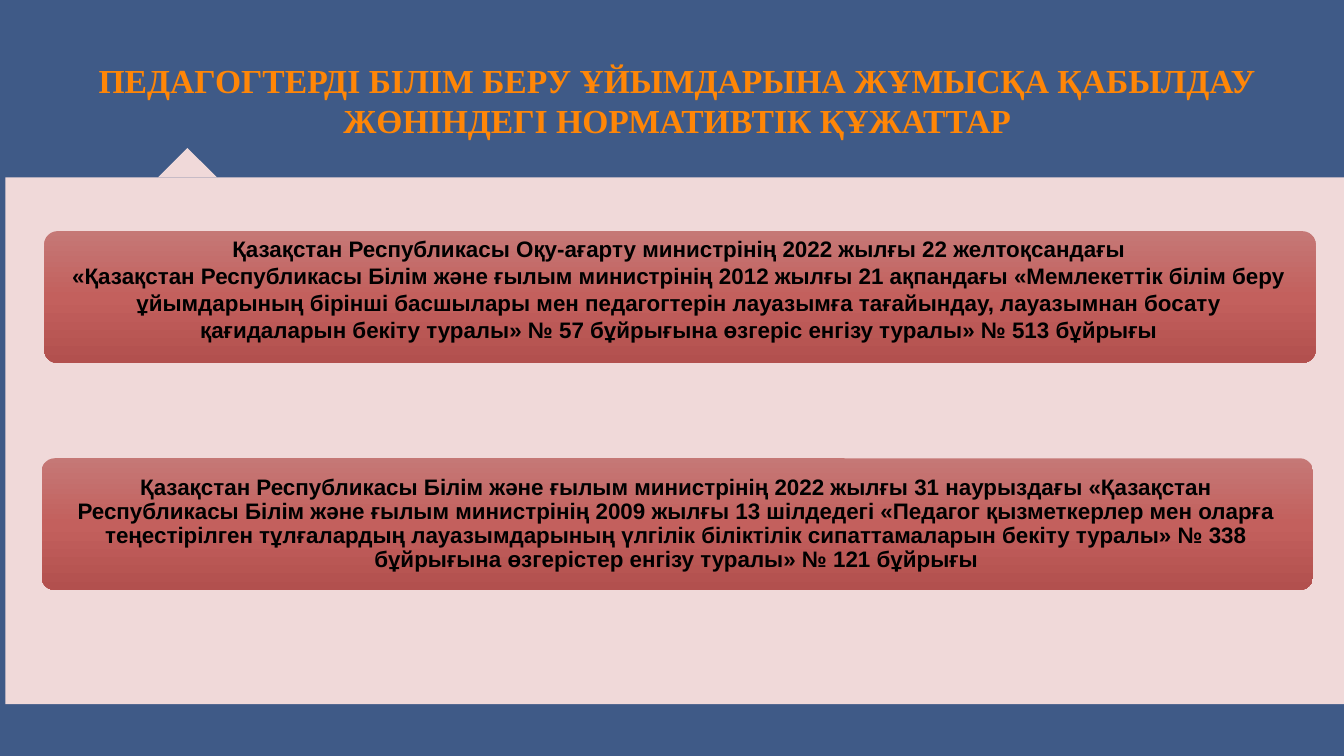
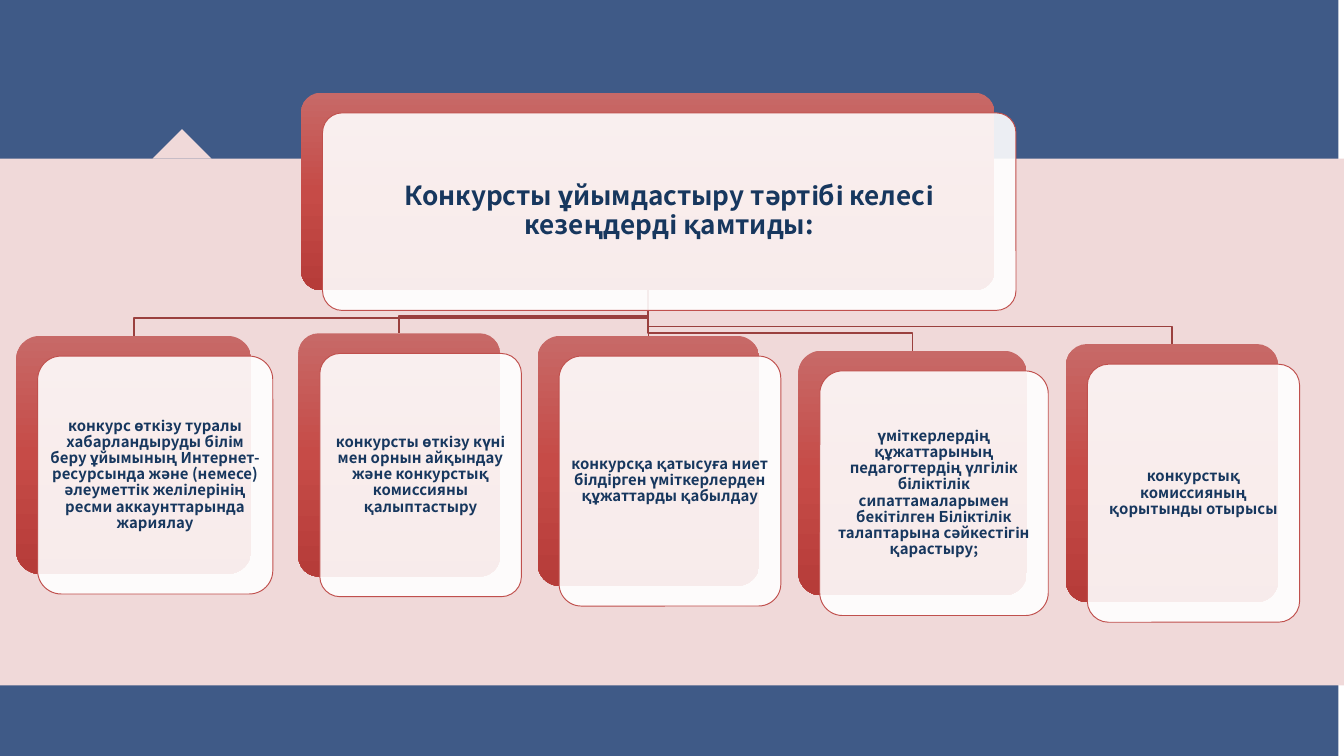
from copy import deepcopy
from dataclasses import dataclass

from lxml.etree import SubElement
from pptx import Presentation
from pptx.dml.color import RGBColor
from pptx.enum.shapes import MSO_SHAPE as Preset
from pptx.enum.text import MSO_ANCHOR as Anchor, PP_ALIGN as Align
from pptx.oxml.ns import qn
from pptx.util import Inches, Pt

COLUMNS, ROWS = 100, 56.25  # square grid units of a tenth of an inch


@dataclass(frozen=True)
class Theme:
    band: str = "3F5A87"
    panel: str = "F0D9D9"
    order: tuple = ("C57876", "C3605D", "B2504E")
    card_back: tuple = ("C76967", "C64B47", "B63C39")
    card_front: str = "FFFFFF"
    card_edge: str = "C0504D"
    branch: str = "9A403E"
    front_opacity: int = 90
    corner: float = 0.1


THEME = Theme()
TITLE = {"name": "Times New Roman", "size": 18, "color": "FF8607"}
ORDER = {"name": "Arial", "size": 12, "color": "000000"}
HEADING = {"name": "Noto Sans CJK SC", "size": 14, "color": "17375E"}
STAGE = {**HEADING, "size": 8}

ORDERS_TITLE = ("ПЕДАГОГТЕРДІ БІЛІМ БЕРУ ҰЙЫМДАРЫНА ЖҰМЫСҚА ҚАБЫЛДАУ "
                "ЖӨНІНДЕГІ НОРМАТИВТІК ҚҰЖАТТАР")
ORDER_513 = (
    "Қазақстан Республикасы Оқу-ағарту министрінің 2022 жылғы 22 желтоқсандағы",
    "«Қазақстан Республикасы Білім және ғылым министрінің 2012 жылғы 21 ақпандағы "
    "«Мемлекеттік білім беру ұйымдарының бірінші басшылары мен педагогтерін "
    "лауазымға тағайындау, лауазымнан босату қағидаларын бекіту туралы» № 57 "
    "бұйрығына өзгеріс енгізу туралы» № 513 бұйрығы",
)
ORDER_121 = (
    "Қазақстан Республикасы Білім және ғылым министрінің 2022 жылғы 31 наурыздағы "
    "«Қазақстан Республикасы Білім және ғылым министрінің 2009 жылғы 13 шілдедегі "
    "«Педагог қызметкерлер мен оларға теңестірілген тұлғалардың лауазымдарының "
    "үлгілік біліктілік сипаттамаларын бекіту туралы» № 338 бұйрығына өзгерістер "
    "енгізу туралы» № 121 бұйрығы",
)
STAGES_HEADING = "Конкурсты ұйымдастыру тәртібі келесі кезеңдерді қамтиды:"
HEADING_BOX = (22.4, 6.9, 51.6, 14.7)
STAGES = [
    ((1.2, 25, 17.5, 17.7),
     "конкурс өткізу туралы хабарландыруды білім беру ұйымының Интернет-ресурсында "
     "және (немесе) әлеуметтік желілерінің ресми аккаунттарында жариялау"),
    ((22.2, 24.8, 15, 18.1),
     "конкурсты өткізу күні мен орнын айқындау және конкурстық комиссияны "
     "қалыптастыру"),
    ((40, 25, 16.5, 18.6),
     "конкурсқа қатысуға ниет білдірген үміткерлерден құжаттарды қабылдау"),
    ((59.4, 26.1, 17, 18.2),
     "үміткерлердің құжаттарының педагогтердің үлгілік біліктілік "
     "сипаттамаларымен бекітілген Біліктілік талаптарына сәйкестігін қарастыру;"),
    ((79.3, 25.6, 15.8, 19.2), "конкурстық комиссияның қорытынды отырысы"),
]


def grid(*units):
    return [Inches(unit / 10) for unit in units]


def set_all(target, values):
    for name, value in values.items():
        setattr(target, name, value)


def paint(fill, color):
    fill.solid()
    fill.fore_color.rgb = RGBColor.from_string(color)


def add_block(slide, preset, box, color):
    block = slide.shapes.add_shape(preset, *grid(*box))
    block.shadow.inherit = False
    block.line.fill.background()
    paint(block.fill, color)
    return block


def add_rounded(slide, box, colors):
    """Rounded block shaded from top to bottom through three colours."""
    block = add_block(slide, Preset.ROUNDED_RECTANGLE, box, colors[0])
    block.adjustments[0] = THEME.corner
    block.fill.gradient()
    block.fill.gradient_angle = 270
    stop_list = next(block.element.iter(qn("a:gsLst")))
    stop_list.append(deepcopy(stop_list[-1]))
    for index, (stop, color) in enumerate(zip(block.fill.gradient_stops, colors)):
        stop.position = index / (len(colors) - 1)
        stop.color.rgb = RGBColor.from_string(color)
    return block


def write(holder, paragraphs, style, spacing=1.0, margins=None):
    """Margins are left, top, right and bottom in grid units."""
    frame = holder.text_frame
    set_all(frame, {"word_wrap": True, "vertical_anchor": Anchor.MIDDLE})
    if margins:
        sides = ("margin_left", "margin_top", "margin_right", "margin_bottom")
        set_all(frame, dict(zip(sides, grid(*margins))))
    for index, text in enumerate(paragraphs):
        paragraph = frame.add_paragraph() if index else frame.paragraphs[0]
        set_all(paragraph, {"alignment": Align.CENTER, "line_spacing": spacing})
        run = paragraph.add_run()
        run.text = text
        set_all(run.font, {"name": style["name"], "size": Pt(style["size"]),
                           "bold": True})
        run.font.color.rgb = RGBColor.from_string(style["color"])


def add_backdrop(slide, left, top):
    """Blue field with a pale panel at left, top and a pointer on its upper edge."""
    add_block(slide, Preset.RECTANGLE, (left - 0.4, 0, COLUMNS, ROWS), THEME.band)
    add_block(slide, Preset.RECTANGLE, (left, top, COLUMNS - left, 39.2), THEME.panel)
    pointer = add_block(slide, Preset.RIGHT_TRIANGLE,
                        (left + 12, top - 1.55, 3.1, 3.1), THEME.panel)
    pointer.rotation = 135


def add_order(slide, box, paragraphs, spacing, margins):
    block = add_rounded(slide, box, THEME.order)
    write(block, paragraphs, ORDER, spacing, margins)


def add_card(slide, box, text, style, margin):
    """Shaded block with a translucent text block offset in front of it."""
    left, top, width, height = box
    add_rounded(slide, box, THEME.card_back)
    front = add_block(slide, Preset.ROUNDED_RECTANGLE,
                      (left + 1.6, top + 1.5, width, height), THEME.card_front)
    front.adjustments[0] = THEME.corner
    tint = next(front.element.spPr.iter(qn("a:srgbClr")))
    SubElement(tint, qn("a:alpha"), val=str(THEME.front_opacity * 1000))
    paint(front.line.fill, THEME.card_edge)
    front.line.width = Pt(0.5)
    write(front, [text], style, 0.9, [margin] * 4)


def add_branch(slide, parent, child):
    """Elbow line from the foot of the parent box to the top of the child box."""
    start_x, start_y = parent[0] + parent[2] / 2, parent[1] + parent[3]
    end_x, end_y = child[0] + child[2] / 2, child[1]
    turn = end_y - 1.3
    builder = slide.shapes.build_freeform(*grid(start_x, start_y))
    builder.add_line_segments(
        [grid(start_x, turn), grid(end_x, turn), grid(end_x, end_y)], close=False)
    branch = builder.convert_to_shape()
    branch.shadow.inherit = False
    branch.fill.background()
    paint(branch.line.fill, THEME.branch)
    branch.line.width = Pt(1)


def build_orders(slide):
    add_backdrop(slide, 0.4, 13.2)
    title = slide.shapes.add_textbox(*grid(5.9, 3.9, 89, 7.1))
    write(title, [ORDERS_TITLE], TITLE)
    add_order(slide, (3.3, 17.2, 94.6, 9.8), ORDER_513, 1.0, (1.3, 0, 1.4, 1.2))
    add_order(slide, (3.1, 34.1, 94.6, 9.8), ORDER_121, 0.9, (1.3, 0.3, 1.4, 0.3))


def build_stages(slide):
    add_backdrop(slide, 0, 11.8)
    for box, _ in STAGES:
        add_branch(slide, HEADING_BOX, box)
    add_card(slide, HEADING_BOX, STAGES_HEADING, HEADING, 0.6)
    for box, text in STAGES:
        add_card(slide, box, text, STAGE, 0.3)


def main():
    deck = Presentation()
    deck.slide_width, deck.slide_height = grid(COLUMNS, ROWS)
    blank = deck.slide_layouts[6]
    for build in (build_orders, build_stages):
        build(deck.slides.add_slide(blank))
    deck.save("out.pptx")


if __name__ == "__main__":
    main()
